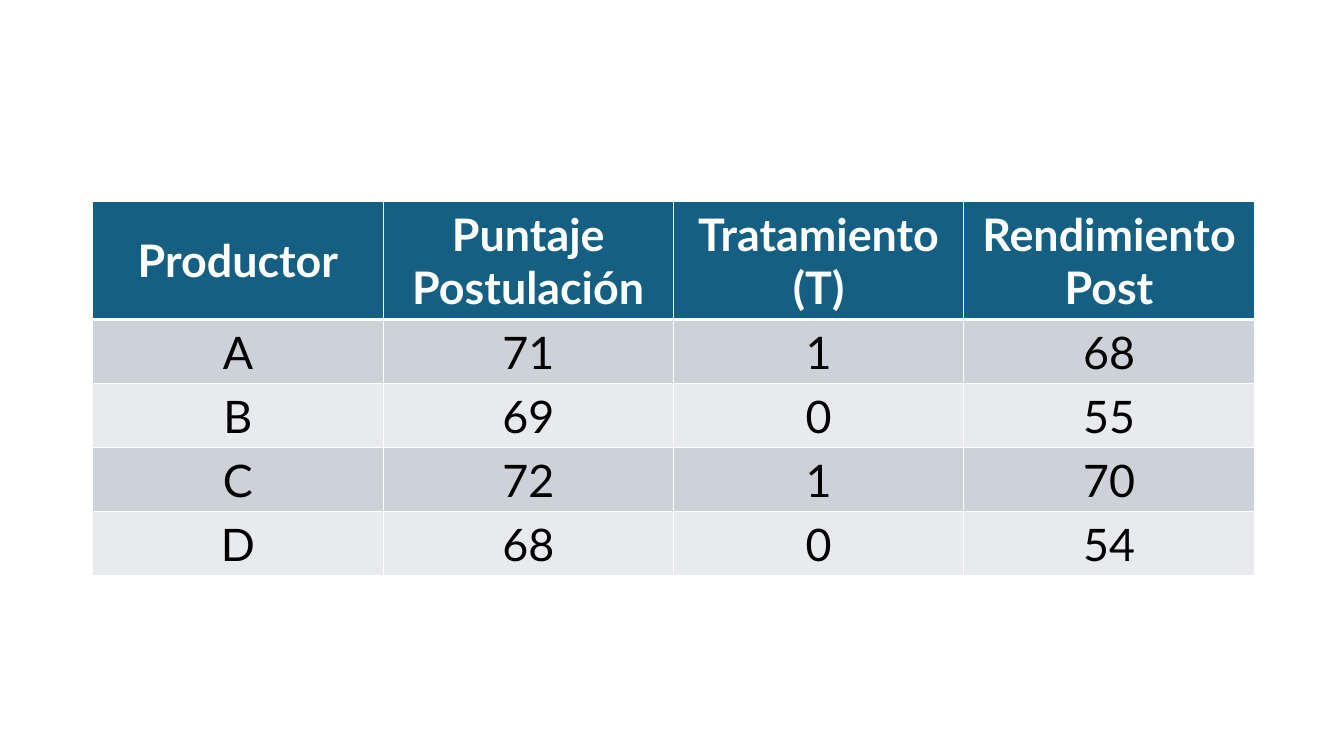
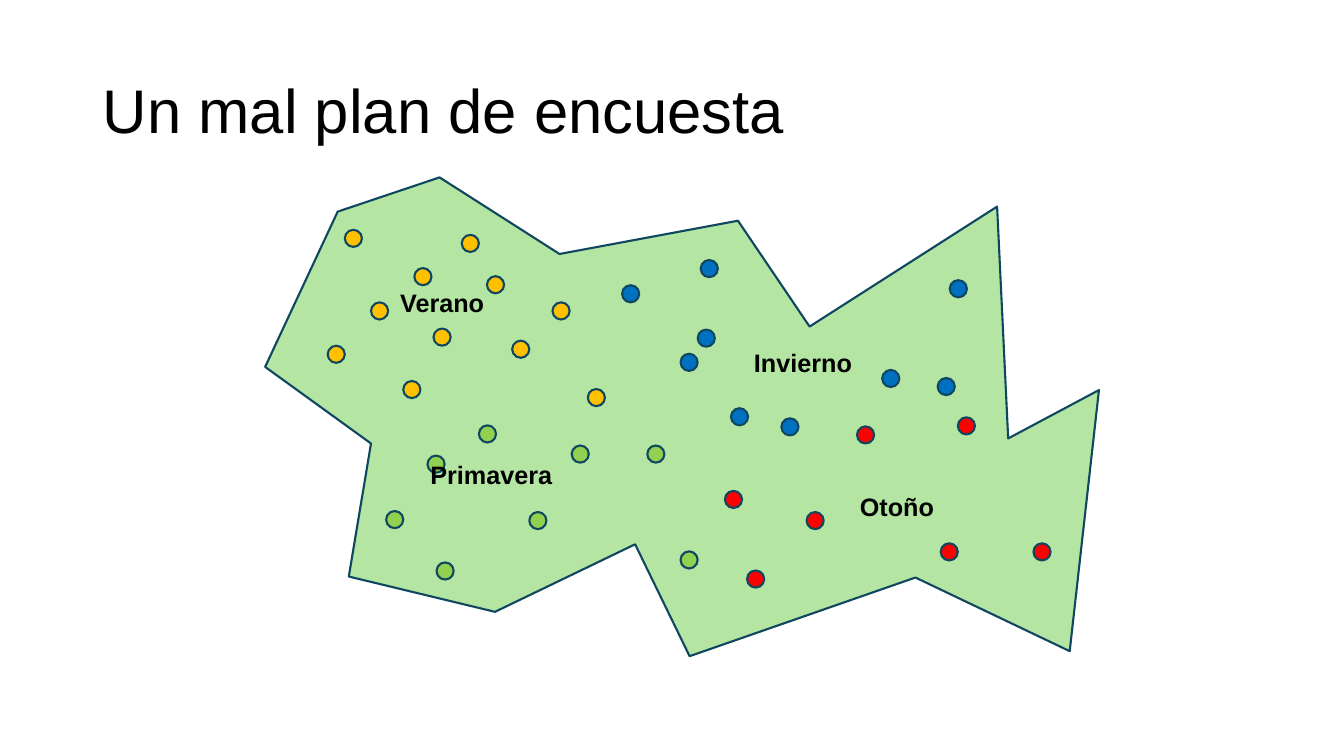
from lxml import etree
from pptx import Presentation
from pptx.dml.color import RGBColor
from pptx.enum.shapes import MSO_SHAPE
from pptx.enum.text import MSO_ANCHOR, MSO_AUTO_SIZE, PP_ALIGN
from pptx.oxml.ns import qn
from pptx.util import Emu, Pt

OVAL = MSO_SHAPE.OVAL
MIDDLE = MSO_ANCHOR.MIDDLE
NO_FIT = MSO_AUTO_SIZE.NONE
LEFT, CENTER = PP_ALIGN.LEFT, PP_ALIGN.CENTER

# Shared measures, fonts and colours
EMU_PER_PX = 9144  # 100 px to the inch
TITLE_ONLY, BLANK = 5, 6
SANS, TABLE_FONT = "Arial", "Lato"
BLACK, WHITE = "000000", "FFFFFF"
HEADER, BAND_DARK, BAND_LIGHT = "156082", "CCD2D8", "E8EAED"
OUTLINE, LAND = "104760", "B4E5A2"
DOT = 17

# Table content
ROWS = [
    ("Productor", "Puntaje Postulación", "Tratamiento (T)", "Rendimiento Post"),
    ("A", "71", "1", "68"),
    ("B", "69", "0", "55"),
    ("C", "72", "1", "70"),
    ("D", "68", "0", "54"),
]

# Map outline, and for each season: colour, label box, dot corners
REGION = [
    (335, 210), (263, 364), (368, 440), (346, 572), (491, 607), (630, 540),
    (684, 651), (908, 573), (1061, 646), (1090, 387), (1000, 435), (989, 205),
    (803, 324), (732, 219), (555, 252), (436, 176),
]
SEASONS = {
    "Verano": ("FFC000", (387, 280, 138, 40), [
        (342, 228), (411, 266), (458, 233), (368, 300), (430, 326), (483, 274),
        (400, 378), (325, 343), (508, 338), (548, 300), (583, 386)]),
    "Primavera": ("92D050", (417, 451, 193, 40), [
        (675, 547), (475, 422), (424, 452), (642, 442),
        (525, 508), (567, 442), (433, 558), (383, 507)]),
    "Otoño": ("FF0000", (843, 483, 126, 40), [
        (850, 423), (933, 539), (719, 487), (741, 566),
        (800, 508), (950, 414), (1025, 539)]),
    "Invierno": ("0070C0", (738, 340, 153, 40), [
        (942, 278), (775, 415), (617, 283), (675, 351), (725, 405),
        (695, 258), (692, 327), (875, 367), (930, 375)]),
}


def px(n):
    return Emu(n * EMU_PER_PX)


def rgb(color):
    return RGBColor.from_string(color)


def write(tf, text, size, font=SANS, color=BLACK, bold=False, align=LEFT,
          spacing=None):
    p = tf.paragraphs[0]
    p.alignment = align
    p.line_spacing = spacing
    r = p.add_run()
    r.text = text
    r.font.size = Pt(size)
    r.font.name = font
    r.font.bold = bold
    r.font.color.rgb = rgb(color)


def paint(sp, fill):
    sp.shadow.inherit = False
    sp.fill.solid()
    sp.fill.fore_color.rgb = rgb(fill)
    sp.line.color.rgb = rgb(OUTLINE)
    sp.line.width = Pt(1.5)


def add_borders(cell, top=1, bottom=1):
    tc_pr = cell._tc.get_or_add_tcPr()
    widths = {"a:lnL": 1, "a:lnR": 1, "a:lnT": top, "a:lnB": bottom}
    for i, (tag, width) in enumerate(widths.items()):
        ln = etree.Element(qn(tag), w=str(Pt(width)))
        fill = etree.SubElement(ln, qn("a:solidFill"))
        etree.SubElement(fill, qn("a:srgbClr"), val=WHITE)
        tc_pr.insert(i, ln)  # borders come before the fill


def add_data_table(slide, rows, x, y, col_width, header_height, row_height):
    n_rows, n_cols = len(rows), len(rows[0])
    height = header_height + (n_rows - 1) * row_height
    table = slide.shapes.add_table(n_rows, n_cols, px(x), px(y),
                                   px(n_cols * col_width), px(height)).table
    for col in table.columns:
        col.width = px(col_width)
    for i, values in enumerate(rows):
        is_header = i == 0
        table.rows[i].height = px(header_height if is_header else row_height)
        band = BAND_DARK if i % 2 else BAND_LIGHT
        for j, value in enumerate(values):
            cell = table.cell(i, j)
            cell.vertical_anchor = MIDDLE
            cell.fill.solid()
            cell.fill.fore_color.rgb = rgb(HEADER if is_header else band)
            add_borders(cell, top=3 if i == 1 else 1,
                        bottom=3 if is_header else 1)
            write(cell.text_frame, value, 32, font=TABLE_FONT, bold=is_header,
                  color=WHITE if is_header else BLACK, align=CENTER)


def set_title(slide, text):
    title = slide.shapes.title
    title.left, title.top = px(92), px(40)
    title.width, title.height = px(1150), px(145)
    tf = title.text_frame
    tf.vertical_anchor = MIDDLE
    tf.auto_size = NO_FIT
    write(tf, text, 44, spacing=0.9)


def add_region(slide, points):
    builder = slide.shapes.build_freeform(*points[0], scale=EMU_PER_PX)
    builder.add_line_segments(points[1:], close=True)
    paint(builder.convert_to_shape(), LAND)


def add_season(slide, name, color, label_box, dots):
    group = slide.shapes.add_group_shape()
    for x, y in dots:
        paint(group.shapes.add_shape(OVAL, px(x), px(y), px(DOT), px(DOT)),
              color)
    label = group.shapes.add_textbox(*map(px, label_box))
    label.text_frame.word_wrap = True
    write(label.text_frame, name, 18, bold=True)


def main():
    prs = Presentation()
    prs.slide_width, prs.slide_height = px(1333), px(750)

    # Slide 1: table of producers
    slide = prs.slides.add_slide(prs.slide_layouts[BLANK])
    add_data_table(slide, ROWS, x=92, y=200, col_width=288,
                   header_height=116, row_height=63)

    # Slide 2: map of survey points by season
    slide = prs.slides.add_slide(prs.slide_layouts[TITLE_ONLY])
    set_title(slide, "Un mal plan de encuesta")
    add_region(slide, REGION)
    for name, (color, label_box, dots) in SEASONS.items():
        add_season(slide, name, color, label_box, dots)

    prs.save("out.pptx")


if __name__ == "__main__":
    main()
